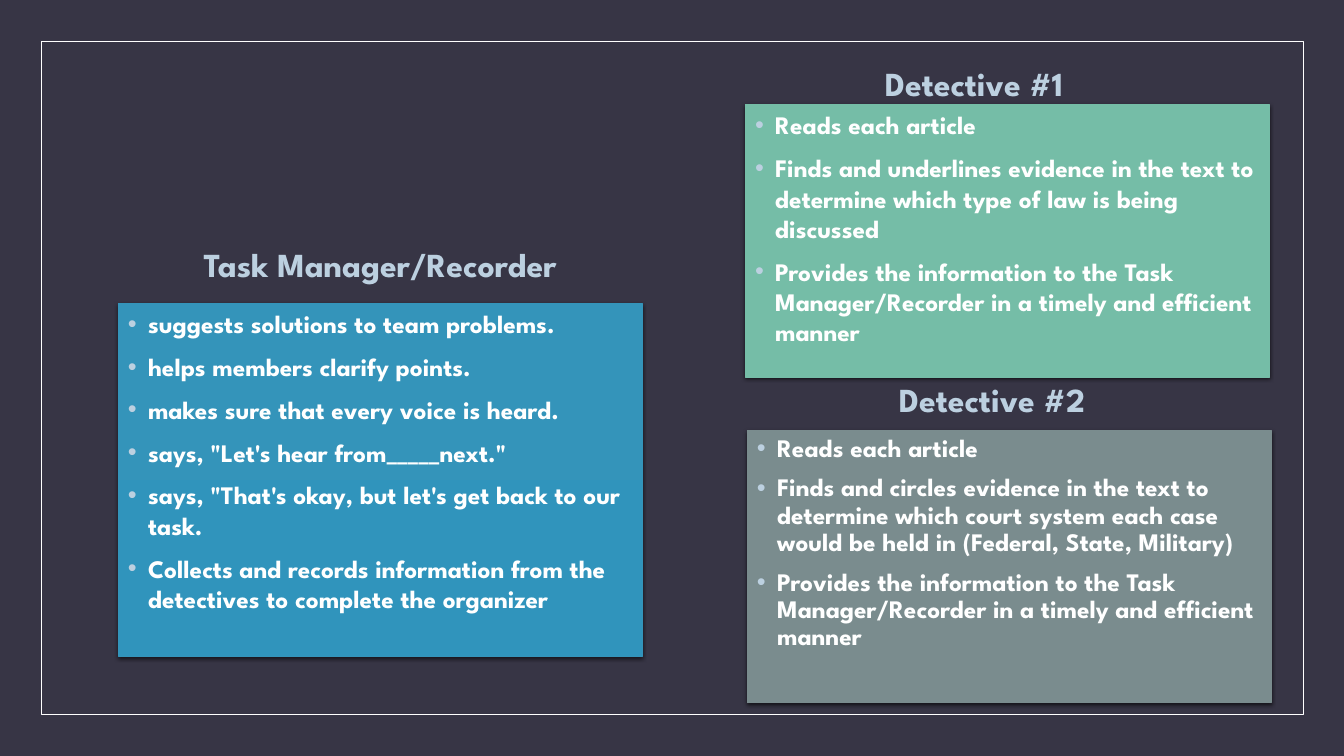
from dataclasses import dataclass

from lxml.etree import SubElement
from pptx import Presentation
from pptx.dml.color import RGBColor as Color
from pptx.enum.shapes import MSO_SHAPE as Shape
from pptx.enum.text import MSO_ANCHOR as Anchor, PP_ALIGN as Align
from pptx.oxml.ns import qn
from pptx.util import Inches, Pt


@dataclass(frozen=True)
class Theme:
    """Colours, font and sizes of the slide."""
    background: str = "373545"
    heading: str = "BCD0E0"
    white: str = "FFFFFF"
    shadow: str = "000000"
    blue: tuple = ("3494BA", "3094BC")
    green: tuple = ("75BDA7", "72BDA6")
    grey: tuple = ("7A8C8E", "788B8D")
    font: str = "League Spartan"
    heading_size: int = 24
    body_size: int = 18
    gap: int = 9
    line: float = 0.5


THEME = Theme()
PANEL_WIDTH = 5.2
HEADING_HEIGHT = 0.7
BULLET_INDENT = 0.2
HAND_OVER = ("Provides the information to the Task Manager/Recorder "
             "in a timely and efficient manner")
MANAGER_TASKS = [
    "suggests solutions to team problems.",
    "helps members clarify points.",
    "makes sure that every voice is heard.",
    "says, \"Let's hear from_____next.\"",
    "says, \"That's okay, but let's get back to our task.",
    "Collects and records information from the detectives to complete the organizer",
]
FIRST_DETECTIVE_TASKS = [
    "Reads each article",
    "Finds and underlines evidence in the text to determine which type of law is being discussed",
    HAND_OVER,
]
SECOND_DETECTIVE_TASKS = [
    "Reads each article",
    "Finds and circles evidence in the text to determine which court system "
    "each case would be held in (Federal, State, Military)",
    HAND_OVER,
]


def add_span(para, text, size, color):
    """Add one bold run to a paragraph."""
    span = para.add_run()
    span.text = text
    span.font.name = THEME.font
    span.font.size = Pt(size)
    span.font.bold = True
    span.font.color.rgb = Color.from_string(color)


def add_rectangle(page, left, top, width, height, line_color):
    """Add a thinly outlined rectangle without a shadow."""
    box = page.shapes.add_shape(
        Shape.RECTANGLE, Inches(left), Inches(top), Inches(width), Inches(height))
    box.shadow.inherit = False
    box.line.color.rgb = Color.from_string(line_color)
    box.line.width = Pt(THEME.line)
    return box


def add_frame(page):
    """Draw the border line around the page."""
    add_rectangle(page, 0.41, 0.41, 12.52, 6.68, THEME.white).fill.background()


def add_heading(page, left, top, text):
    """Add a centred role heading."""
    box = page.shapes.add_textbox(
        Inches(left), Inches(top), Inches(PANEL_WIDTH), Inches(HEADING_HEIGHT))
    box.text_frame.word_wrap = True
    box.text_frame.vertical_anchor = Anchor.MIDDLE
    para = box.text_frame.paragraphs[0]
    para.alignment = Align.CENTER
    add_span(para, text, THEME.heading_size, THEME.heading)


def add_drop_shadow(box):
    """Give a panel a soft shadow below it."""
    effects = box._element.spPr.find(qn("a:effectLst"))
    shadow = SubElement(effects, qn("a:outerShdw"), blurRad=str(Pt(3)),
                        dist=str(Pt(1)), dir="5400000", algn="ctr", rotWithShape="0")
    color = SubElement(shadow, qn("a:srgbClr"), val=THEME.shadow)
    SubElement(color, qn("a:alpha"), val="63000")


def add_bullet(para):
    """Give a paragraph a hanging round bullet."""
    properties = para._p.get_or_add_pPr()
    properties.set("marL", str(Inches(BULLET_INDENT)))
    properties.set("indent", str(-Inches(BULLET_INDENT)))
    color = SubElement(properties, qn("a:buClr"))
    SubElement(color, qn("a:srgbClr"), val=THEME.heading)
    SubElement(properties, qn("a:buFont"), typeface="Arial")
    SubElement(properties, qn("a:buChar"), char="•")


def add_panel(page, left, top, height, colors, tasks, line_spacing=1.0):
    """Add a shaded panel with a bulleted task list."""
    box = add_rectangle(page, left, top, PANEL_WIDTH, height, colors[0])
    box.fill.gradient()
    box.fill.gradient_angle = 270
    for stop, color in zip(box.fill.gradient_stops, colors):
        stop.color.rgb = Color.from_string(color)
    add_drop_shadow(box)
    frame = box.text_frame
    frame.word_wrap = True
    frame.vertical_anchor = Anchor.TOP
    for index, task in enumerate(tasks):
        para = frame.add_paragraph() if index else frame.paragraphs[0]
        add_bullet(para)
        para.alignment = Align.LEFT
        para.line_spacing = line_spacing
        para.space_before = Pt(THEME.gap if index else 0)
        add_span(para, task, THEME.body_size, THEME.white)


def main():
    """Build the slide of team roles and save it."""
    deck = Presentation()
    deck.slide_width, deck.slide_height = Inches(13.33), Inches(7.5)
    page = deck.slides.add_slide(deck.slide_layouts[6])
    page.background.fill.solid()
    page.background.fill.fore_color.rgb = Color.from_string(THEME.background)
    add_frame(page)
    add_heading(page, 1.17, 2.27, "Task Manager/Recorder")
    add_panel(page, 1.17, 3.01, 3.5, THEME.blue, MANAGER_TASKS)
    add_heading(page, 7.06, 0.47, "Detective #1")
    add_panel(page, 7.39, 1.04, 2.7, THEME.green, FIRST_DETECTIVE_TASKS)
    add_panel(page, 7.41, 4.27, 2.7, THEME.grey, SECOND_DETECTIVE_TASKS, 0.9)
    add_heading(page, 7.24, 3.61, "Detective #2")
    deck.save("out.pptx")


if __name__ == "__main__":
    main()
